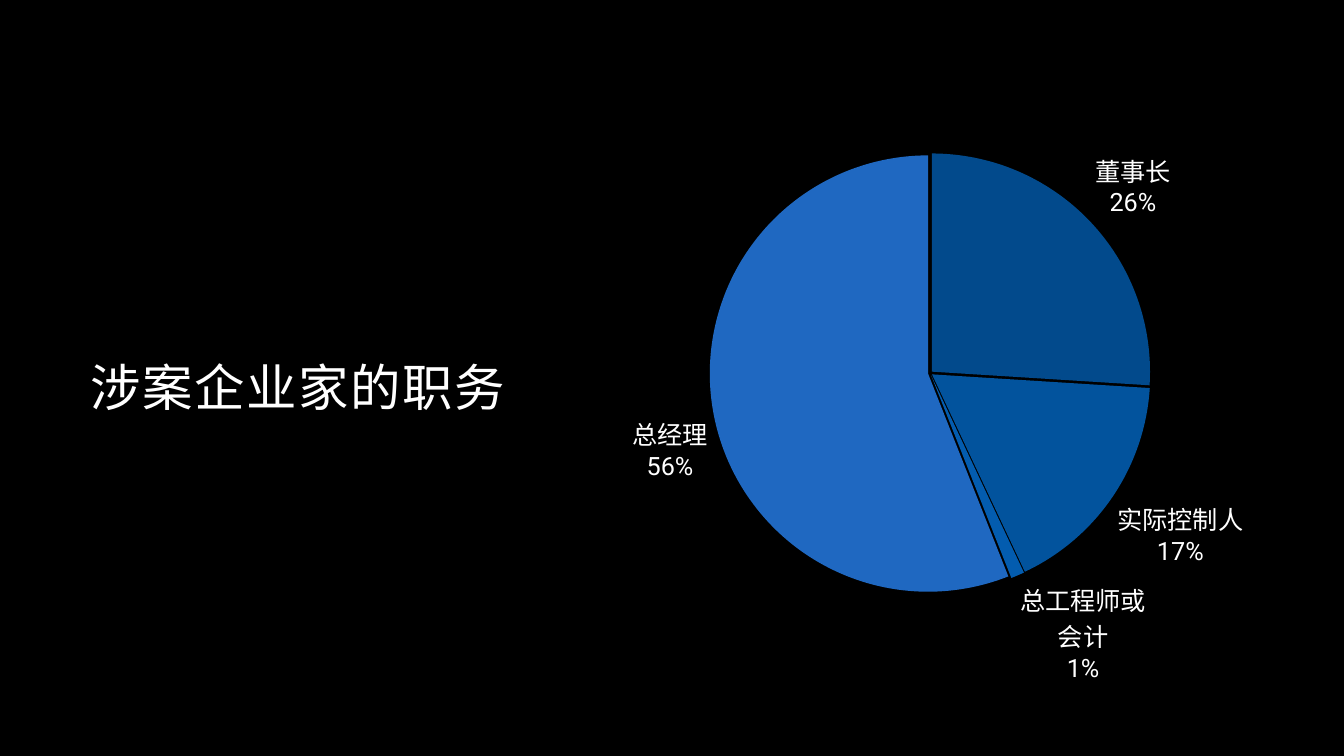
from lxml import etree
from pptx import Presentation
from pptx.chart.data import CategoryChartData
from pptx.dml.color import RGBColor
from pptx.enum.chart import XL_CHART_TYPE, XL_LABEL_POSITION
from pptx.enum.text import MSO_ANCHOR, PP_ALIGN
from pptx.oxml.ns import qn
from pptx.util import Inches, Pt

PIE = XL_CHART_TYPE.PIE
OUTSIDE_END = XL_LABEL_POSITION.OUTSIDE_END
CENTER = PP_ALIGN.CENTER
MIDDLE = MSO_ANCHOR.MIDDLE

COLORS = {"background": "000000", "text": "FFFFFF"}
CJK_FONT = "Noto Sans CJK SC"
LATIN_FONT = "Roboto"
# Category, value, slice colour
POSITIONS = [
    ("董事长", 26, "024A8C"),
    ("实际控制人", 17, "02539D"),
    ("总工程师或会计", 1, "035CAF"),
    ("总经理", 56, "1F68C1"),
]


class SlideBuilder:
    def __init__(self, deck):
        self.page = deck.slides.add_slide(deck.slide_layouts[5])
        self.paint(self.page.background.fill, COLORS["background"])

    def paint(self, fill, color):
        fill.solid()
        fill.fore_color.rgb = RGBColor.from_string(color)

    def style_font(self, font, size, latin):
        font.size = Pt(size)
        font.bold = False
        font.name = latin
        font.color.rgb = RGBColor.from_string(COLORS["text"])

    def add_title(self, text, left, top, width, height):
        box = self.page.shapes.title
        box.left, box.top = Inches(left), Inches(top)
        box.width, box.height = Inches(width), Inches(height)
        frame = box.text_frame
        frame.word_wrap = True
        frame.vertical_anchor = MIDDLE
        frame.margin_left = frame.margin_right = Inches(0.06)
        frame.margin_top = frame.margin_bottom = Inches(0.06)
        para = frame.paragraphs[0]
        para.alignment = CENTER
        para.line_spacing = 1.3
        span = para.add_run()
        span.text = text
        self.style_font(span.font, 36, CJK_FONT)
        properties = span._r.get_or_add_rPr()
        properties.set("spc", "110")
        self.add_east_asian_font(properties)

    def add_east_asian_font(self, properties):
        latin = properties.find(qn("a:latin"))
        east_asian = etree.Element(qn("a:ea"), typeface=CJK_FONT)
        latin.addnext(east_asian)

    def add_pie(self, slices, left, top, size):
        data = CategoryChartData()
        data.categories = [name for name, _, _ in slices]
        data.add_series("Series 1", [value for _, value, _ in slices])
        chart = self.page.shapes.add_chart(
            PIE, Inches(left), Inches(top), Inches(size), Inches(size), data
        ).chart
        chart.has_title = False
        chart.has_legend = False
        self.style_font(chart.font, 10, CJK_FONT)
        chart.plots[0].vary_by_categories = True
        series = chart.plots[0].series[0]
        for index, (_, _, color) in enumerate(slices):
            self.paint(series.points[index].format.fill, color)
        self.label_slices(series)
        explosion = etree.Element(qn("c:explosion"), val="1")
        series._element.find(qn("c:dPt")).addprevious(explosion)
        self.place_plot(chart, x=0.194, y=0.194, w=0.611, h=0.599)

    def label_slices(self, series):
        labels = series.data_labels
        labels.show_value = False
        labels.show_category_name = True
        labels.show_percentage = True
        labels.number_format = "0%"
        labels.number_format_is_linked = False
        labels.position = OUTSIDE_END
        self.style_font(labels.font, 18, LATIN_FONT)
        element = labels._element
        self.add_east_asian_font(next(element.iter(qn("a:defRPr"))))
        separator = etree.Element(qn("c:separator"))
        separator.text = "\n"
        element.find(qn("c:showBubbleSize")).addnext(separator)

    def place_plot(self, chart, **fractions):
        """Fix the inner plot area, in fractions of the chart's size."""
        plot_area = next(chart._chartSpace.iter(qn("c:plotArea")))
        for layout in plot_area.findall(qn("c:layout")):
            plot_area.remove(layout)
        layout = etree.Element(qn("c:layout"))
        plot_area.insert(0, layout)
        manual = etree.SubElement(layout, qn("c:manualLayout"))
        settings = {"layoutTarget": "inner", "xMode": "edge", "yMode": "edge", **fractions}
        for name, value in settings.items():
            etree.SubElement(manual, qn(f"c:{name}"), val=str(value))


def main():
    deck = Presentation()
    deck.slide_width, deck.slide_height = Inches(13.33), Inches(7.5)
    builder = SlideBuilder(deck)
    builder.add_pie(POSITIONS, left=5.58, top=0.1, size=7.3)
    builder.add_title("涉案企业家的职务", left=-0.45, top=3.44, width=6.81, height=0.61)
    deck.save("out.pptx")


if __name__ == "__main__":
    main()
